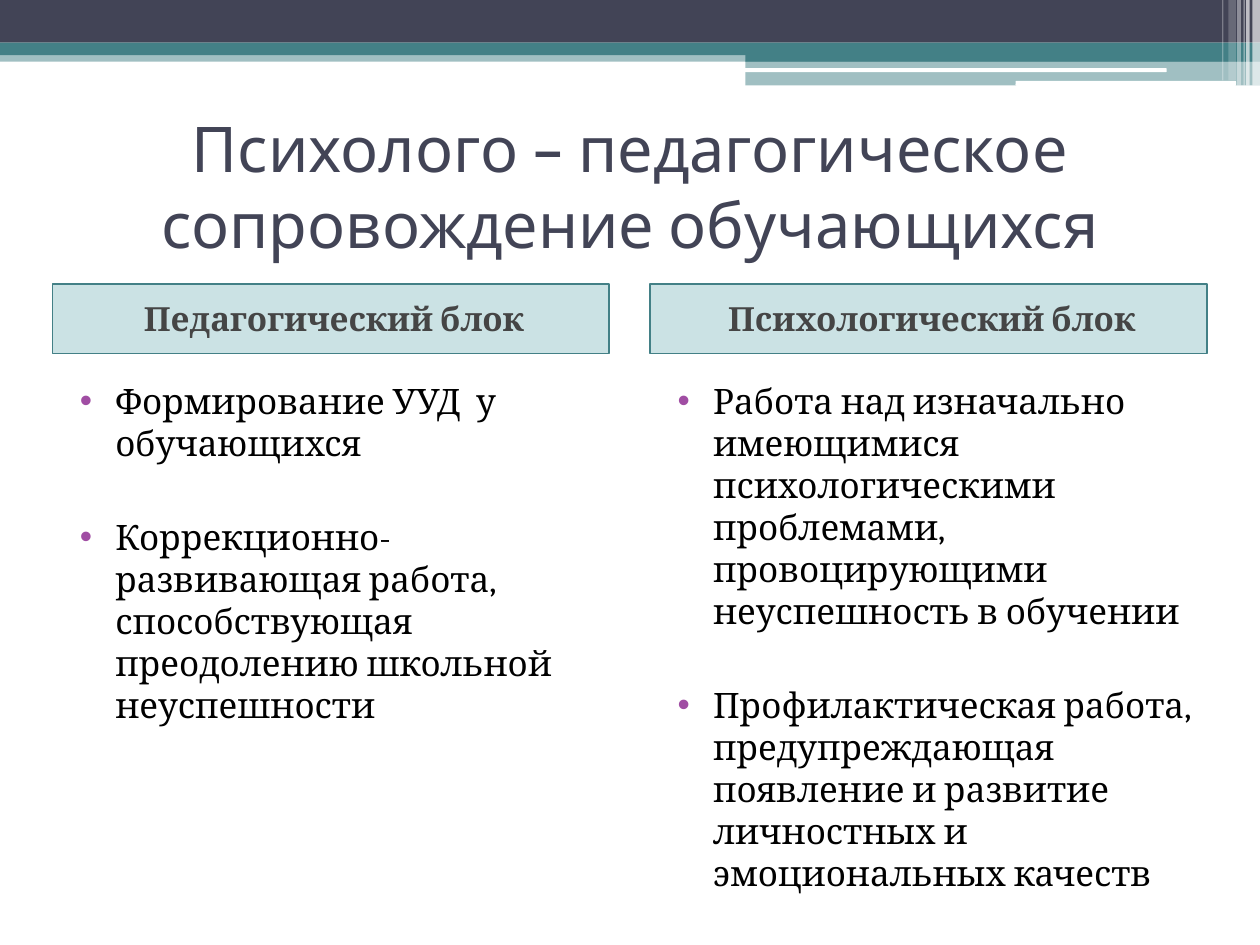
from dataclasses import dataclass

from lxml import etree
from pptx import Presentation
from pptx.dml.color import RGBColor
from pptx.enum.shapes import MSO_SHAPE
from pptx.enum.text import MSO_ANCHOR, PP_ALIGN
from pptx.oxml.ns import qn
from pptx.util import Pt

RECTANGLE, ROUNDED = MSO_SHAPE.RECTANGLE, MSO_SHAPE.ROUNDED_RECTANGLE
LEFT, CENTER = PP_ALIGN.LEFT, PP_ALIGN.CENTER
TOP, MIDDLE = MSO_ANCHOR.TOP, MSO_ANCHOR.MIDDLE


@dataclass(frozen=True)
class Theme:
    navy: str = "424456"
    teal: str = "438086"
    panel: str = "328E97"
    white: str = "FFFFFF"
    header: str = "454545"
    body: str = "000000"
    bullet: str = "A04DA3"
    title_font: str = "Cabin"
    body_font: str = "Cambria"
    title_size: int = 36
    header_size: int = 19
    body_size: int = 20


theme = Theme()
presentation = Presentation()
presentation.slide_width, presentation.slide_height = Pt(720), Pt(540)
slide = presentation.slides.add_slide(presentation.slide_layouts[6])


def add_block(left, top, width, height, color, opacity=100, kind=RECTANGLE):
    shape = slide.shapes.add_shape(kind, Pt(left), Pt(top), Pt(width), Pt(height))
    shape.shadow.inherit = False
    shape.fill.solid()
    shape.fill.fore_color.rgb = RGBColor.from_string(color)
    shape.line.fill.background()
    if opacity < 100:
        color_element = shape.fill._xPr.find(qn("a:solidFill"))[0]
        etree.SubElement(color_element, qn("a:alpha"), val=str(opacity * 1000))
    return shape


def write_text(shape, paragraphs, *, size, color, font=theme.body_font, bold=False,
               align=LEFT, anchor=TOP, before=0, gap=0, margin=0, indent=0, bullet=None):
    frame = shape.text_frame
    frame.word_wrap = True
    frame.vertical_anchor = anchor
    for index, text in enumerate(paragraphs):
        paragraph = frame.add_paragraph() if index else frame.paragraphs[0]
        paragraph.alignment = align
        paragraph.space_before = Pt(gap if index else before)
        properties = paragraph._p.get_or_add_pPr()
        properties.set("marL", str(Pt(margin)))
        properties.set("indent", str(Pt(indent)))
        if bullet:
            bullet_color = etree.SubElement(properties, qn("a:buClr"))
            etree.SubElement(bullet_color, qn("a:srgbClr"), val=bullet)
            etree.SubElement(properties, qn("a:buFont"), typeface="Arial")
            etree.SubElement(properties, qn("a:buChar"), char="•")
        run = paragraph.add_run()
        run.text = text
        run.font.name, run.font.size, run.font.bold = font, Pt(size), bold
        run.font.color.rgb = RGBColor.from_string(color)


# Top band
add_block(0, 28.8, 720, 6.5, theme.teal, 50)
add_block(0, 0, 720, 24.4, theme.navy)
add_block(0, 24.4, 720, 7.2, theme.teal)
add_block(426, 28.3, 294, 7, theme.teal)
add_block(426, 34.6, 294, 14.2, theme.teal, 50)
for left, top, width, height in ((425.5, 39, 241.2, 2.2), (580.3, 46.2, 126, 2.8)):
    add_block(left, top, width, height, theme.white, kind=ROUNDED)

# Light stripes at the right edge: left, width, height, opacity
stripes = (
    (715.7, 4.3, 49, 65), (712.1, 2.1, 49, 65), (710.6, 0.7, 49, 60),
    (707, 2.1, 49, 40), (702, 4.3, 46, 20), (698.4, 0.7, 46, 30),
)
for left, width, height, opacity in stripes:
    add_block(left, 0, width, height, theme.white, opacity)

# Title
title = slide.shapes.add_textbox(Pt(30), Pt(60.5), Pt(660), Pt(90.7))
write_text(title, ["Психолого – педагогическое сопровождение обучающихся"],
           size=theme.title_size, color=theme.navy, font=theme.title_font,
           align=CENTER, anchor=MIDDLE)

# Two columns, each a header over a bulleted list
columns = (
    ("Педагогический блок", (
        "Формирование УУД  у обучающихся",
        "Коррекционно-развивающая работа, способствующая преодолению "
        "школьной неуспешности",
    )),
    ("Психологический блок", (
        "Работа над изначально имеющимися психологическими проблемами, "
        "провоцирующими неуспешность в обучении",
        "Профилактическая работа, предупреждающая появление и развитие "
        "личностных и эмоциональных качеств",
    )),
)
column_width, column_step = 318.2, 341.6
for index, (heading, items) in enumerate(columns):
    left = 30 + index * column_step
    header = add_block(left, 162.2, column_width, 39.8, theme.panel, 25)
    header.line.color.rgb = RGBColor.from_string(theme.teal)
    header.line.width = Pt(1)
    write_text(header, [heading], size=theme.header_size, color=theme.header,
               bold=True, align=CENTER, anchor=MIDDLE, before=3, margin=3.6)
    body = slide.shapes.add_textbox(Pt(left), Pt(213.1), Pt(column_width), Pt(306))
    write_text(body, items, size=theme.body_size, color=theme.body, before=3, gap=30,
               margin=28.8, indent=-20.2, bullet=theme.bullet)

presentation.save("out.pptx")
